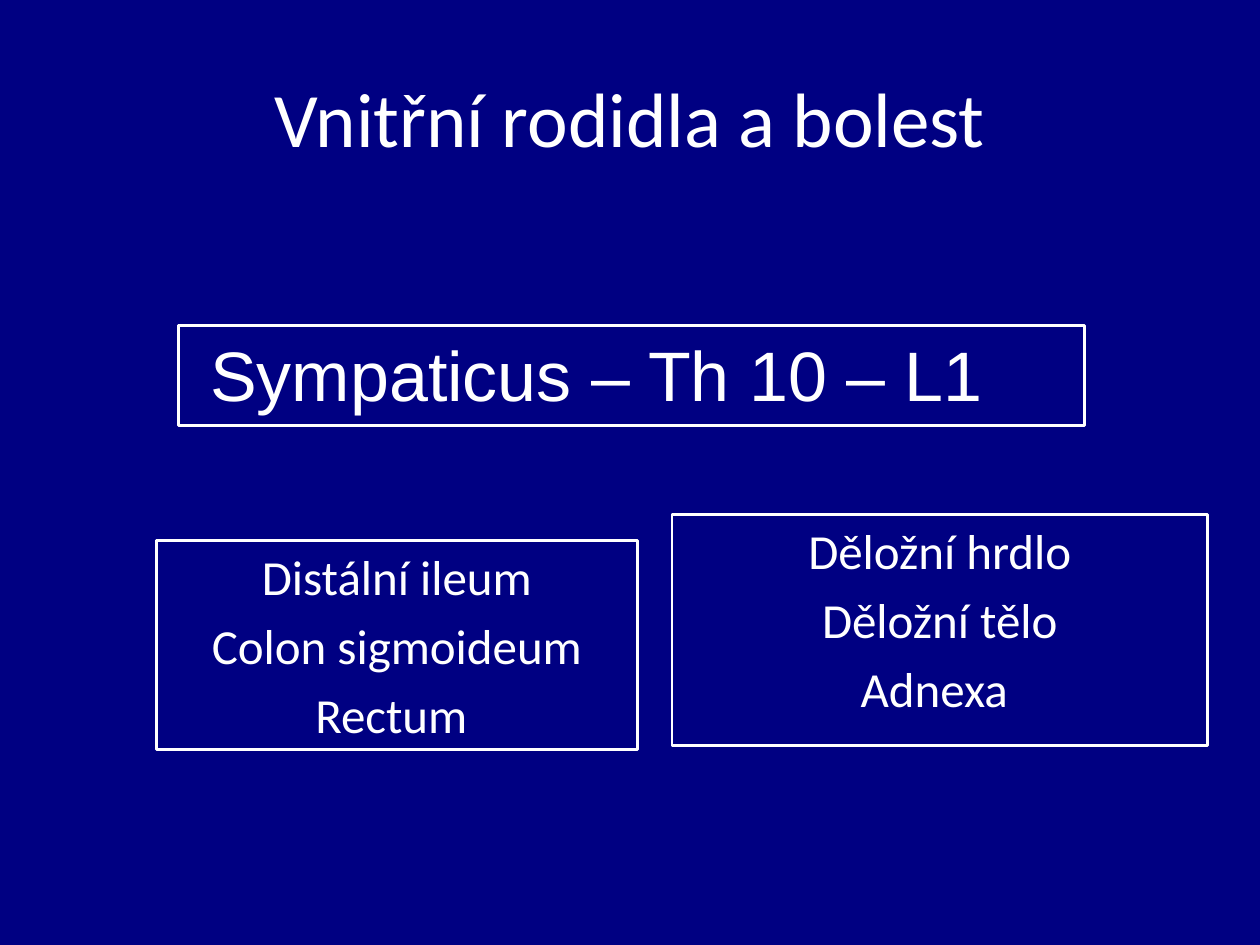
from pptx import Presentation
from pptx.dml.color import RGBColor as Rgb
from pptx.enum.shapes import MSO_SHAPE as Shape
from pptx.enum.text import MSO_ANCHOR as Anchor, PP_ALIGN as Align
from pptx.util import Inches, Pt

WIDTH, HEIGHT = Inches(10), Inches(7.5)
COLS, ROWS = 120, 90
NAVY, WHITE = "000082", "FFFFFF"


def paint(color, code):
    """Set a colour format from a hex string."""
    color.rgb = Rgb.from_string(code)


def place(col, row, cols, rows):
    """Turn grid columns and rows into left, top, width and height."""
    return (int(WIDTH * col / COLS), int(HEIGHT * row / ROWS),
            int(WIDTH * cols / COLS), int(HEIGHT * rows / ROWS))


def write(frame, text, size, font="Calibri", align=Align.CENTER,
          anchor=Anchor.TOP, gap=0):
    """Fill a text frame and format its paragraphs and runs."""
    frame.word_wrap = True
    frame.vertical_anchor = anchor
    frame.text = text
    for para in frame.paragraphs:
        para.alignment = align
        para.space_before = Pt(gap)
        for run in para.runs:
            run.font.name = font
            run.font.size = Pt(size)
            paint(run.font.color, WHITE)


def add_title(slide, text, area):
    """Add the heading of the slide."""
    box = slide.shapes.add_textbox(*place(*area))
    write(box.text_frame, text, 44, anchor=Anchor.MIDDLE)


def add_box(slide, text, area, size, **style):
    """Add an outlined box with text."""
    box = slide.shapes.add_shape(Shape.RECTANGLE, *place(*area))
    box.shadow.inherit = False
    box.fill.background()
    box.line.width = Pt(1.5)
    paint(box.line.color, WHITE)
    write(box.text_frame, text, size, **style)


def main():
    """Build and save the slide."""
    deck = Presentation()
    deck.slide_width, deck.slide_height = WIDTH, HEIGHT
    slide = deck.slides.add_slide(deck.slide_layouts[6])
    fill = slide.background.fill
    fill.solid()
    paint(fill.fore_color, NAVY)

    add_title(slide, "Vnitřní rodidla a bolest", (6, 3.6, 108, 15))
    add_box(slide, "Děložní hrdlo\nDěložní tělo\nAdnexa ",
            (64, 49, 51, 22), 28, gap=5.6)
    add_box(slide, " Sympaticus – Th 10 – L1", (17, 31, 86.3, 9.5), 40,
            font="Arial", align=Align.LEFT)
    add_box(slide, "Distální ileum\nColon sigmoideum\nRectum ",
            (14.9, 51.5, 45.8, 19.9), 28, gap=5.6)
    deck.save("out.pptx")


if __name__ == "__main__":
    main()
